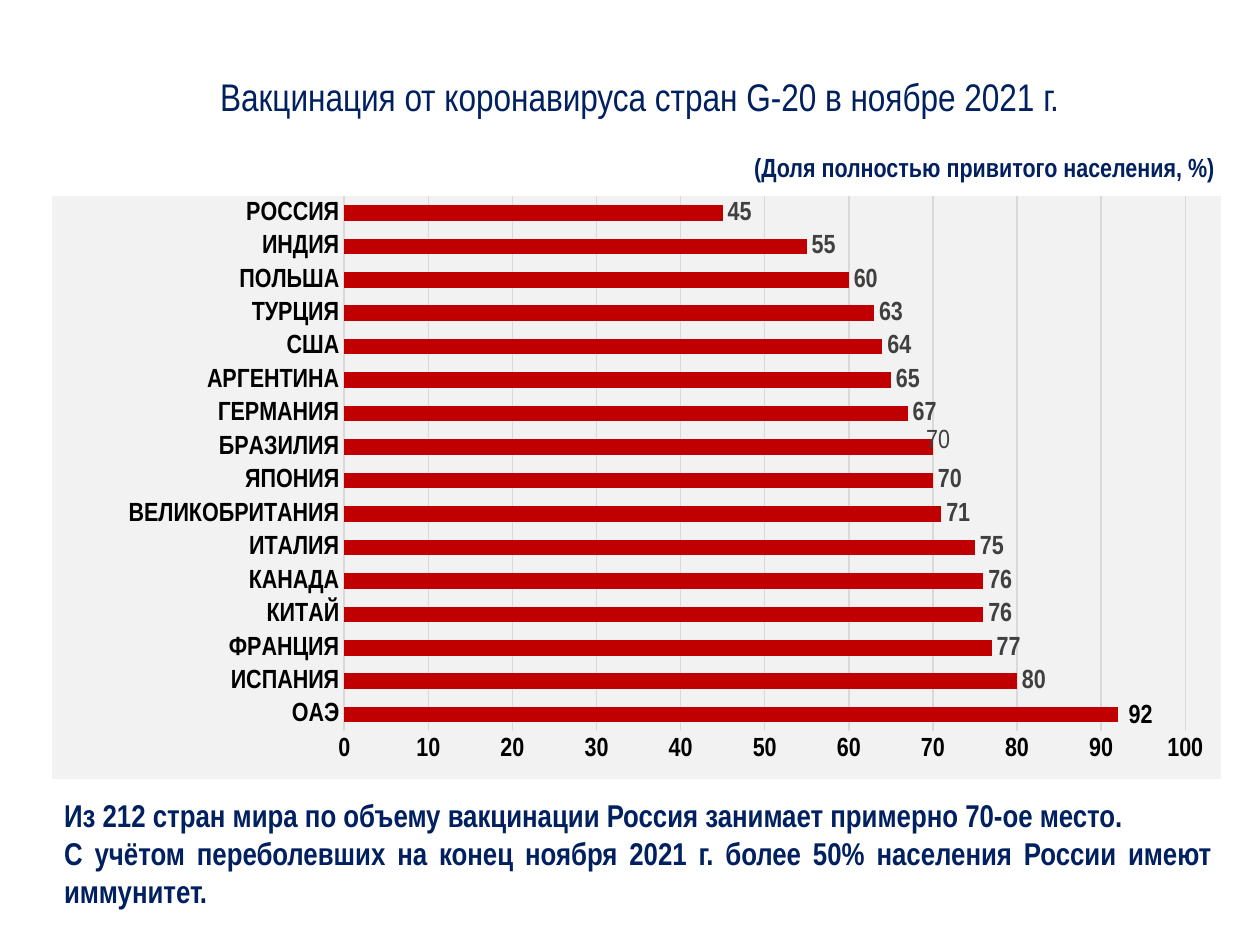
"""Build a slide with a bar chart of vaccination shares by country."""
from lxml.etree import SubElement
from pptx import Presentation
from pptx.chart.data import CategoryChartData
from pptx.dml.color import RGBColor
from pptx.enum.chart import XL_CHART_TYPE, XL_LABEL_POSITION, XL_TICK_MARK
from pptx.enum.text import MSO_ANCHOR, PP_ALIGN
from pptx.oxml import parse_xml
from pptx.oxml.ns import nsdecls, qn
from pptx.util import Pt

NAVY = RGBColor(0x00, 0x20, 0x60)
RED = RGBColor(0xC0, 0x00, 0x00)
BLACK = RGBColor(0x00, 0x00, 0x00)
DARK_GRAY = RGBColor(0x40, 0x40, 0x40)
GRID_GRAY = RGBColor(0xD9, 0xD9, 0xD9)
PANEL_GRAY = RGBColor(0xF2, 0xF2, 0xF2)

VACCINATED = {
    "ОАЭ": 92, "ИСПАНИЯ": 80, "ФРАНЦИЯ": 77, "КИТАЙ": 76,
    "КАНАДА": 76, "ИТАЛИЯ": 75, "ВЕЛИКОБРИТАНИЯ": 71, "ЯПОНИЯ": 70,
    "БРАЗИЛИЯ": 70, "ГЕРМАНИЯ": 67, "АРГЕНТИНА": 65, "США": 64,
    "ТУРЦИЯ": 63, "ПОЛЬША": 60, "ИНДИЯ": 55, "РОССИЯ": 45,
}
CONCLUSIONS = [
    "Из 212 стран мира по объему вакцинации Россия занимает примерно 70-ое место.",
    "С учётом переболевших на конец ноября 2021 г. более 50% населения России имеют иммунитет.",
]


class SlideBuilder:
    """Hold the style and the current slide."""

    font_name = "Arial Narrow"
    label_size = 15

    def __init__(self, slide):
        self.slide = slide

    def style_font(self, font, size, color, bold=True):
        font.name = self.font_name
        font.size = Pt(size)
        font.bold = bold
        font.color.rgb = color

    def place(self, shape, left, top, width, height):
        shape.left, shape.top = Pt(left), Pt(top)
        shape.width, shape.height = Pt(width), Pt(height)

    def fill_text(self, shape, lines, size, color, alignment, bold=True):
        text_frame = shape.text_frame
        text_frame.word_wrap = True
        text_frame.text = "\n".join(lines)
        for paragraph in text_frame.paragraphs:
            paragraph.alignment = alignment
            for run in paragraph.runs:
                self.style_font(run.font, size, color, bold)

    def add_title(self, text, *box):
        title = self.slide.shapes.title
        self.place(title, *box)
        self.fill_text(title, [text], 22, NAVY, PP_ALIGN.CENTER, bold=False)
        title.text_frame.vertical_anchor = MSO_ANCHOR.MIDDLE
        effects = parse_xml(
            f'<a:effectLst {nsdecls("a")}><a:outerShdw blurRad="38100" dist="38100" dir="2700000">'
            '<a:srgbClr val="000000"><a:alpha val="43000"/></a:srgbClr></a:outerShdw></a:effectLst>')
        properties = title.text_frame.paragraphs[0].runs[0].font._element
        properties.find(qn("a:solidFill")).addnext(effects)

    def add_text(self, lines, box, size, color, alignment):
        shape = self.slide.shapes.add_textbox(*map(Pt, box))
        self.fill_text(shape, lines, size, color, alignment)

    def panel_properties(self):
        fill = f'<a:solidFill><a:srgbClr val="{PANEL_GRAY}"/></a:solidFill>'
        return parse_xml(f'<c:spPr {nsdecls("c", "a")}>{fill}<a:ln w="9525">{fill}</a:ln></c:spPr>')

    def manual_layout(self, **settings):
        layout = parse_xml(f'<c:layout {nsdecls("c")}><c:manualLayout/></c:layout>')
        for name, value in settings.items():
            SubElement(layout[0], qn(f"c:{name}")).set("val", str(value))
        return layout

    def style_axis(self, axis):
        axis.major_tick_mark = axis.minor_tick_mark = XL_TICK_MARK.NONE
        self.style_font(axis.tick_labels.font, self.label_size, BLACK)

    def add_bar_chart(self, values, *box):
        chart_data = CategoryChartData()
        chart_data.categories = list(values)
        chart_data.add_series("Series 1", list(values.values()))
        chart = self.slide.shapes.add_chart(
            XL_CHART_TYPE.BAR_CLUSTERED, *map(Pt, box), chart_data).chart
        chart.has_legend = chart.has_title = False
        chart.font.name = "Calibri"
        chart.font.size = Pt(10)
        chart.font.color.rgb = BLACK

        plot = chart.plots[0]
        plot.gap_width, plot.overlap = 115, -20
        plot.vary_by_categories = False
        series = plot.series[0]
        series.format.fill.solid()
        series.format.fill.fore_color.rgb = RED

        self.style_axis(chart.category_axis)
        chart.category_axis.format.line.color.rgb = GRID_GRAY
        chart.category_axis.format.line.width = Pt(1)
        value_axis = chart.value_axis
        self.style_axis(value_axis)
        value_axis.minimum_scale, value_axis.maximum_scale = 0, 100
        value_axis.major_unit = 10
        value_axis.format.line.fill.background()
        value_axis.major_gridlines.format.line.color.rgb = GRID_GRAY
        value_axis.major_gridlines.format.line.width = Pt(0.75)

        self.add_value_labels(series, list(values).index("БРАЗИЛИЯ"))
        self.style_panel(chart)

    def add_value_labels(self, series, light_index):
        labels = series.data_labels
        labels.show_value = True
        labels.position = XL_LABEL_POSITION.OUTSIDE_END
        self.style_font(labels.font, self.label_size, DARK_GRAY)
        light_label = series.points[light_index].data_label
        self.style_font(light_label.font, self.label_size, DARK_GRAY, bold=False)
        light_label.position = XL_LABEL_POSITION.OUTSIDE_END
        label_list = labels._element
        light_element = label_list.find(qn("c:dLbl"))
        light_element[0].addnext(self.manual_layout(x=-0.01, y=-0.01))
        label_list.insert(0, parse_xml(
            f'<c:dLbl {nsdecls("c")}><c:idx val="0"/><c:delete val="1"/></c:dLbl>'))

    def style_panel(self, chart):
        chart_element = chart._chartSpace.find(qn("c:chart"))
        chart_element.addnext(self.panel_properties())
        plot_area = chart_element.find(qn("c:plotArea"))
        for layout in plot_area.findall(qn("c:layout")):
            plot_area.remove(layout)
        plot_area.insert(0, self.manual_layout(
            layoutTarget="inner", xMode="edge", yMode="edge", x=0.25, y=0, w=0.72, h=0.92))
        plot_area.append(self.panel_properties())


def main():
    presentation = Presentation()
    presentation.slide_width, presentation.slide_height = Pt(720), Pt(540)
    builder = SlideBuilder(presentation.slides.add_slide(presentation.slide_layouts[5]))
    builder.add_title("Вакцинация от коронавируса стран G-20 в ноябре 2021 г.", 47.5, 35, 636, 40)
    builder.add_bar_chart(VACCINATED, 29.5, 111.6, 668.2, 333.4)
    builder.add_text(["(Доля полностью привитого населения, %)"], (292.3, 82.8, 409, 25.2),
                     15, NAVY, PP_ALIGN.RIGHT)
    builder.add_text(["92"], (637.9, 394.6, 36.7, 25.2), 15, BLACK, PP_ALIGN.LEFT)
    builder.add_text(CONCLUSIONS, (29.5, 451.4, 670.3, 72.7), 18, NAVY, PP_ALIGN.JUSTIFY)
    presentation.save("out.pptx")


if __name__ == "__main__":
    main()
